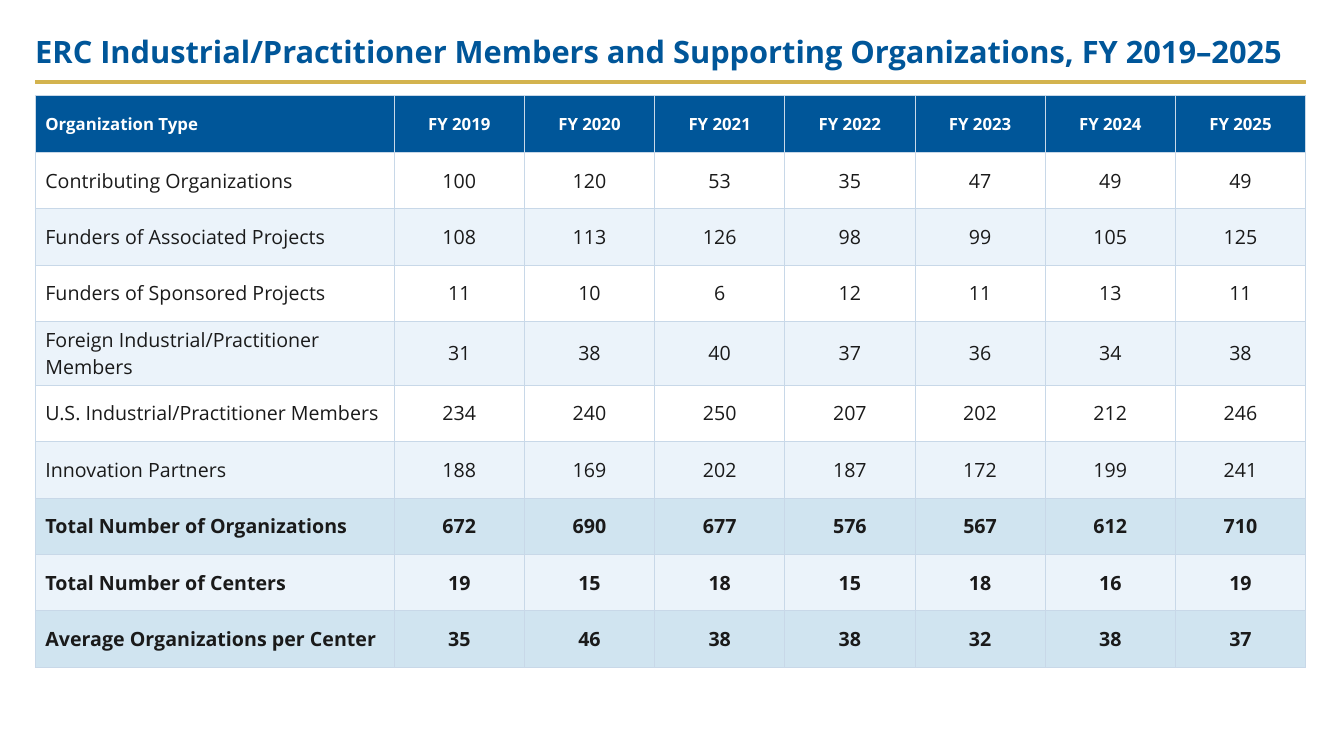
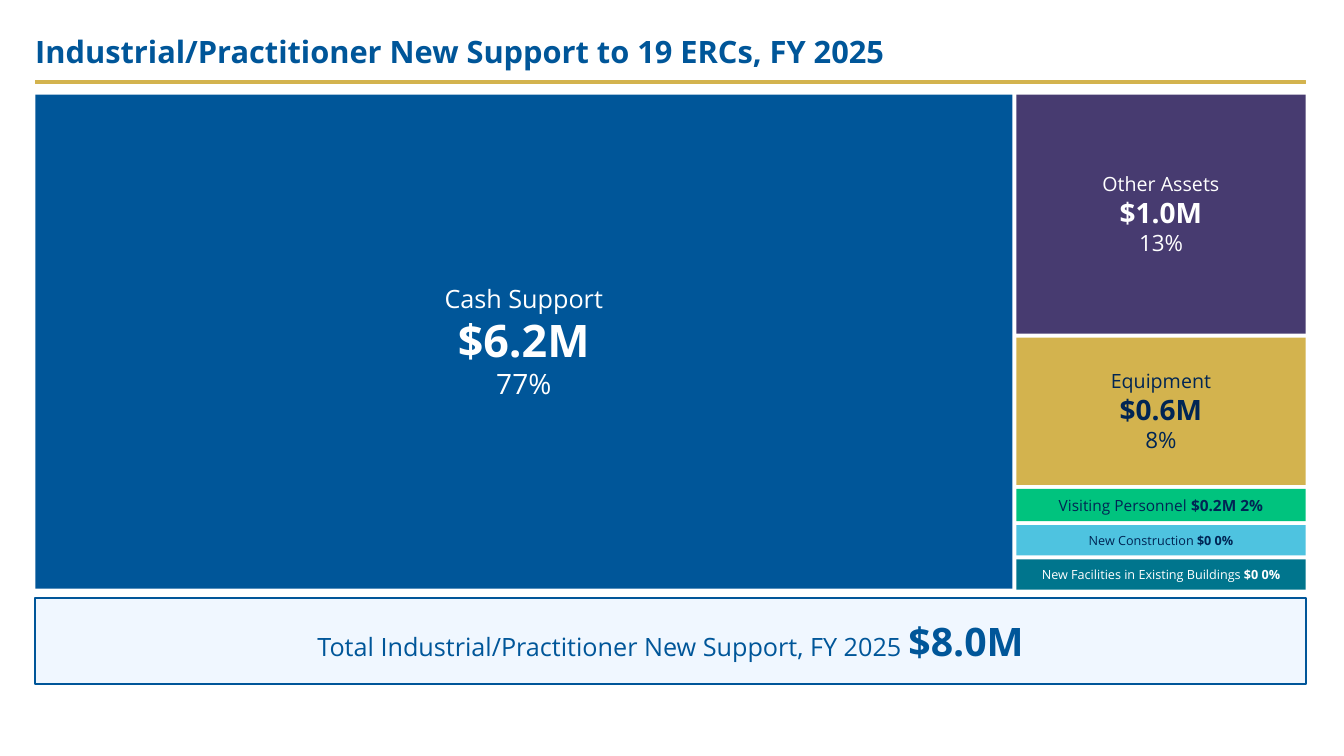
from lxml import etree
from pptx import Presentation
from pptx.dml.color import RGBColor
from pptx.enum.shapes import MSO_SHAPE
from pptx.enum.text import MSO_ANCHOR, PP_ALIGN
from pptx.oxml.ns import qn
from pptx.util import Inches, Pt

RECTANGLE = MSO_SHAPE.RECTANGLE
MIDDLE = MSO_ANCHOR.MIDDLE
LEFT, CENTER = PP_ALIGN.LEFT, PP_ALIGN.CENTER

FONT = "Open Sans"
BLUE = RGBColor(0x00, 0x56, 0x99)
NAVY = RGBColor(0x00, 0x25, 0x54)
GOLD = RGBColor(0xD3, 0xB3, 0x4E)
PURPLE = RGBColor(0x47, 0x3B, 0x70)
GREEN = RGBColor(0x00, 0xC3, 0x7E)
SKY = RGBColor(0x4E, 0xC3, 0xE0)
TEAL = RGBColor(0x00, 0x75, 0x8D)
INK = RGBColor(0x1A, 0x1A, 0x1A)
WHITE = RGBColor(0xFF, 0xFF, 0xFF)
STRIPE = RGBColor(0xEB, 0xF3, 0xFA)
SUMMARY = RGBColor(0xD0, 0xE4, 0xF0)
PALE = RGBColor(0xF0, 0xF7, 0xFF)
BORDER = RGBColor(0xC8, 0xD8, 0xE8)

MARGIN = 0.35
CONTENT_WIDTH = 12.6
LABEL_WIDTH = 3.56
ROW_HEIGHT = 0.56
TALL_ROW_HEIGHT = 0.63
TALL_ROW = 4
FIRST_SUMMARY_ROW = 7
TILE_GAP = 0.04
CASH_WIDTH = 9.69

ORGANIZATION_ROWS = [
    ("Organization Type", *(f"FY {year}" for year in range(2019, 2026))),
    ("Contributing Organizations", 100, 120, 53, 35, 47, 49, 49),
    ("Funders of Associated Projects", 108, 113, 126, 98, 99, 105, 125),
    ("Funders of Sponsored Projects", 11, 10, 6, 12, 11, 13, 11),
    ("Foreign Industrial/Practitioner Members", 31, 38, 40, 37, 36, 34, 38),
    ("U.S. Industrial/Practitioner Members", 234, 240, 250, 207, 202, 212, 246),
    ("Innovation Partners", 188, 169, 202, 187, 172, 199, 241),
    ("Total Number of Organizations", 672, 690, 677, 576, 567, 612, 710),
    ("Total Number of Centers", 19, 15, 18, 15, 18, 16, 19),
    ("Average Organizations per Center", 35, 46, 38, 38, 32, 38, 37),
]

LARGE_TILES = [
    ("Other Assets", "$1.0M", "13%", 2.37, PURPLE, WHITE),
    ("Equipment", "$0.6M", "8%", 1.46, GOLD, NAVY),
]
STRIP_TILES = [
    ("Visiting Personnel", "$0.2M", "2%", 0.32, GREEN, NAVY, 11),
    ("New Construction", "$0", "0%", 0.3, SKY, NAVY, 9),
    ("New Facilities in Existing Buildings", "$0", "0%", 0.3, TEAL, WHITE, 9),
]


def add_text(paragraph, text, size=14, color=INK, bold=False, align=CENTER):
    """Append a formatted run to a paragraph."""
    paragraph.alignment = align
    run = paragraph.add_run()
    run.text = text
    run.font.name = FONT
    run.font.size = Pt(size)
    run.font.bold = bold
    run.font.color.rgb = color


def add_box(slide, left, top, width, height, fill, line=None, line_width=1):
    """Add a flat rectangle and return its text frame."""
    shape = slide.shapes.add_shape(
        RECTANGLE, Inches(left), Inches(top), Inches(width), Inches(height))
    shape.shadow.inherit = False
    shape.fill.solid()
    shape.fill.fore_color.rgb = fill
    if line is None:
        shape.line.fill.background()
    else:
        shape.line.color.rgb = line
        shape.line.width = Pt(line_width)
    frame = shape.text_frame
    frame.word_wrap = True
    frame.vertical_anchor = MIDDLE
    return frame


def add_titled_slide(presentation, title):
    """Add a blank slide with the shared title and gold rule."""
    slide = presentation.slides.add_slide(presentation.slide_layouts[6])
    box = slide.shapes.add_textbox(
        Inches(MARGIN), Inches(0.22), Inches(CONTENT_WIDTH), Inches(0.58))
    frame = box.text_frame
    frame.word_wrap = True
    frame.vertical_anchor = MIDDLE
    frame.margin_left = frame.margin_right = 0
    frame.margin_top = frame.margin_bottom = 0
    add_text(frame.paragraphs[0], title, size=22, color=BLUE, bold=True, align=LEFT)
    add_box(slide, MARGIN, 0.8, CONTENT_WIDTH, 0.03, GOLD, line=GOLD)
    return slide


def set_borders(cell):
    """Give all four sides of a cell a thin border."""
    properties = cell._tc.get_or_add_tcPr()
    for side in ("a:lnL", "a:lnR", "a:lnT", "a:lnB"):
        line = etree.SubElement(properties, qn(side), w=str(Pt(0.5)))
        fill = etree.SubElement(line, qn("a:solidFill"))
        etree.SubElement(fill, qn("a:srgbClr"), val=str(BORDER))


def row_style(index):
    """Return the fill and text format of a table row."""
    if index == 0:
        return BLUE, {"size": 12, "color": WHITE, "bold": True}
    if index >= FIRST_SUMMARY_ROW:
        return (SUMMARY if index % 2 else STRIPE), {"bold": True}
    return (WHITE if index % 2 else STRIPE), {}


def add_organization_table(slide, left, top, width):
    """Add the table of organizations by type and year."""
    row_count, column_count = len(ORGANIZATION_ROWS), len(ORGANIZATION_ROWS[0])
    height = ROW_HEIGHT * (row_count - 1) + TALL_ROW_HEIGHT
    table = slide.shapes.add_table(
        row_count, column_count,
        Inches(left), Inches(top), Inches(width), Inches(height)).table
    year_width = (width - LABEL_WIDTH) / (column_count - 1)
    for index, column in enumerate(table.columns):
        column.width = Inches(year_width if index else LABEL_WIDTH)
    for row_index, values in enumerate(ORGANIZATION_ROWS):
        table.rows[row_index].height = Inches(
            TALL_ROW_HEIGHT if row_index == TALL_ROW else ROW_HEIGHT)
        fill, text_format = row_style(row_index)
        for column_index, value in enumerate(values):
            cell = table.cell(row_index, column_index)
            set_borders(cell)
            cell.fill.solid()
            cell.fill.fore_color.rgb = fill
            cell.vertical_anchor = MIDDLE
            add_text(cell.text_frame.paragraphs[0], str(value),
                     align=CENTER if column_index else LEFT, **text_format)


def add_stacked_tile(slide, box, texts, sizes, fill, color):
    """Add a tile with its name, amount and share on three lines."""
    frame = add_box(slide, *box, fill)
    for index, (text, size) in enumerate(zip(texts, sizes)):
        paragraph = frame.add_paragraph() if index else frame.paragraphs[0]
        add_text(paragraph, text, size=size, color=color, bold=index == 1)


def add_treemap(slide, left, top, width, height):
    """Add the support tiles: cash on the left, the rest stacked on the right."""
    add_stacked_tile(slide, (left, top, CASH_WIDTH, height),
                     ("Cash Support", "$6.2M", "77%"), (18, 32, 20), BLUE, WHITE)
    side_left = left + CASH_WIDTH + TILE_GAP
    side_width = left + width - side_left
    for *texts, tile_height, fill, color in LARGE_TILES:
        add_stacked_tile(slide, (side_left, top, side_width, tile_height),
                         texts, (14, 20, 16), fill, color)
        top += tile_height + TILE_GAP
    for name, amount, share, tile_height, fill, color, size in STRIP_TILES:
        frame = add_box(slide, side_left, top, side_width, tile_height, fill)
        paragraph = frame.paragraphs[0]
        add_text(paragraph, f"{name} ", size=size, color=color)
        add_text(paragraph, f"{amount} {share}", size=size, color=color, bold=True)
        top += tile_height + TILE_GAP


def add_total_band(slide, left, top, width, height):
    """Add the outlined band with the total amount."""
    frame = add_box(slide, left, top, width, height, PALE, line=BLUE, line_width=1.5)
    paragraph = frame.paragraphs[0]
    add_text(paragraph, "Total Industrial/Practitioner New Support, FY 2025 ",
             size=18, color=BLUE)
    add_text(paragraph, "$8.0M", size=28, color=BLUE, bold=True)


def main():
    """Build and save the presentation."""
    presentation = Presentation()
    presentation.slide_width = Inches(13.33)
    presentation.slide_height = Inches(7.5)

    slide = add_titled_slide(
        presentation,
        "ERC Industrial/Practitioner Members and Supporting Organizations, FY 2019–2025")
    add_organization_table(slide, MARGIN, 0.95, CONTENT_WIDTH)

    slide = add_titled_slide(
        presentation, "Industrial/Practitioner New Support to 19 ERCs, FY 2025")
    add_treemap(slide, MARGIN, 0.94, CONTENT_WIDTH, 4.9)
    add_total_band(slide, MARGIN, 5.93, CONTENT_WIDTH, 0.86)

    presentation.save("out.pptx")


if __name__ == "__main__":
    main()
